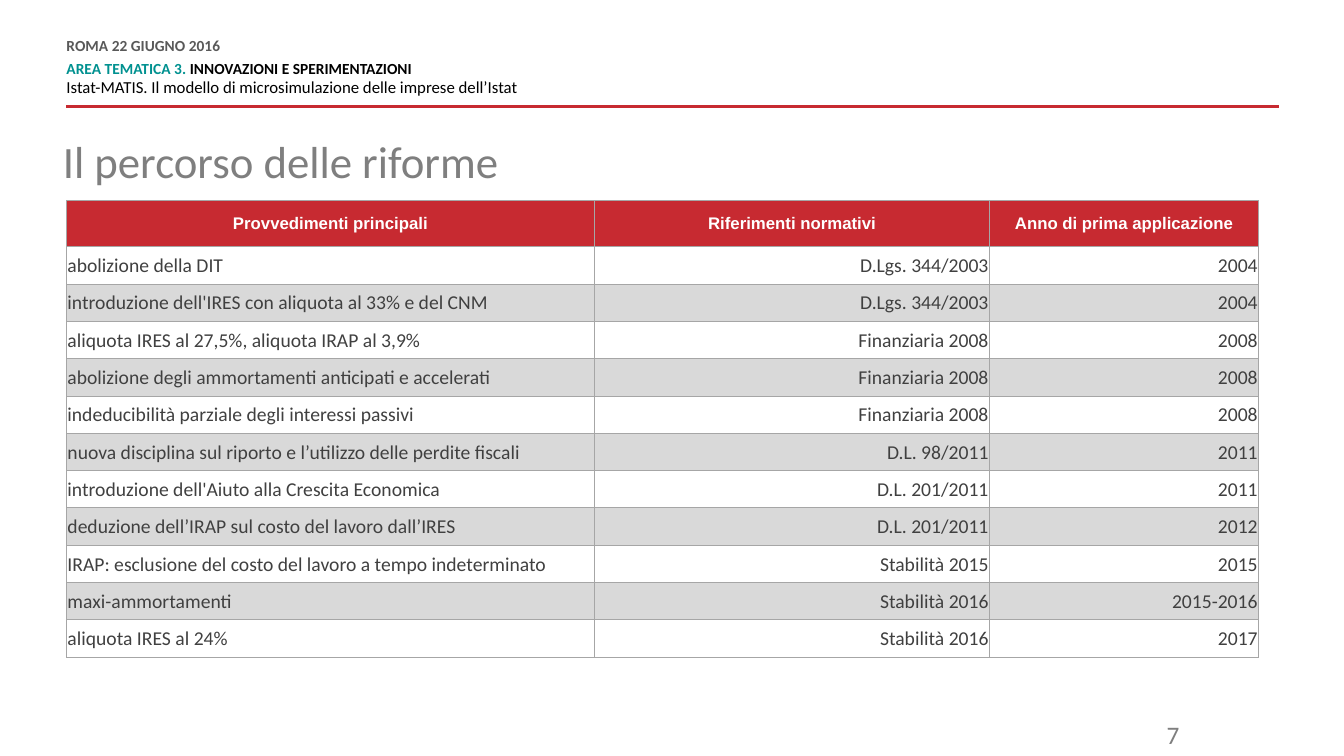
import pptx
import pptx.dml.color
import pptx.enum.shapes
import pptx.enum.text
import pptx.oxml
import pptx.oxml.ns
import pptx.util

Pt = pptx.util.Pt
RGBColor = pptx.dml.color.RGBColor
ALIGN = pptx.enum.text.PP_ALIGN
MIDDLE = pptx.enum.text.MSO_ANCHOR.MIDDLE

RED = RGBColor(0xC7, 0x2A, 0x31)
TEAL = RGBColor(0x00, 0x91, 0x90)
BLACK = RGBColor(0x00, 0x00, 0x00)
WHITE = RGBColor(0xFF, 0xFF, 0xFF)
DARK = RGBColor(0x40, 0x40, 0x40)
SLATE = RGBColor(0x59, 0x59, 0x59)
GREY = RGBColor(0x7F, 0x7F, 0x7F)
BORDER = RGBColor(0xA6, 0xA6, 0xA6)
BAND = RGBColor(0xD9, 0xD9, 0xD9)

HEADINGS = ("Provvedimenti principali", "Riferimenti normativi", "Anno di prima applicazione")
REFORMS = [
    ("abolizione della DIT", "D.Lgs. 344/2003", "2004"),
    ("introduzione dell'IRES con aliquota al 33% e del CNM", "D.Lgs. 344/2003", "2004"),
    ("aliquota IRES al 27,5%, aliquota IRAP al 3,9%", "Finanziaria 2008", "2008"),
    ("abolizione degli ammortamenti anticipati e accelerati", "Finanziaria 2008", "2008"),
    ("indeducibilità parziale degli interessi passivi", "Finanziaria 2008", "2008"),
    ("nuova disciplina sul riporto e l’utilizzo delle perdite fiscali", "D.L. 98/2011", "2011"),
    ("introduzione dell'Aiuto alla Crescita Economica", "D.L. 201/2011", "2011"),
    ("deduzione dell’IRAP sul costo del lavoro dall’IRES", "D.L. 201/2011", "2012"),
    ("IRAP: esclusione del costo del lavoro a tempo indeterminato", "Stabilità 2015", "2015"),
    ("maxi-ammortamenti", "Stabilità 2016", "2015-2016"),
    ("aliquota IRES al 24%", "Stabilità 2016", "2017"),
]


class SlideBuilder:
    font = "Calibri"

    def __init__(self, slide):
        self.slide = slide

    def apply(self, target, formats):
        for name, value in formats.items():
            setattr(target, name, value)

    def run(self, p, text, color, **formats):
        r = p.add_run()
        r.text = text
        self.apply(r.font, {"name": self.font, **formats})
        r.font.color.rgb = color

    def text(self, left, top, width, height, paragraphs, margins=None):
        """Each paragraph is a dict of formats and a list of (text, color, font formats)."""
        sp = self.slide.shapes.add_textbox(Pt(left), Pt(top), Pt(width), Pt(height))
        tf = sp.text_frame
        tf.word_wrap = True
        if margins is not None:
            sides = ("margin_left", "margin_top", "margin_right", "margin_bottom")
            self.apply(tf, dict.fromkeys(sides, Pt(margins)))
        for i, (formats, runs) in enumerate(paragraphs):
            p = tf.add_paragraph() if i else tf.paragraphs[0]
            self.apply(p, formats)
            for text, color, font in runs:
                self.run(p, text, color, **font)

    def rule(self, x1, y1, x2, y2, color, width):
        line = self.slide.shapes.add_connector(
            pptx.enum.shapes.MSO_CONNECTOR.STRAIGHT, Pt(x1), Pt(y1), Pt(x2), Pt(y2))
        line.line.color.rgb = color
        line.line.width = Pt(width)
        pptx.oxml.ns.qn("a:effectLst")
        line._element.spPr.append(pptx.oxml.parse_xml(
            f'<a:effectLst {pptx.oxml.ns.nsdecls("a")}/>'))

    def cell(self, cell, text, fill, color, align, margins, **font):
        tcPr = cell._tc.get_or_add_tcPr()
        for side in ("lnL", "lnR", "lnT", "lnB"):
            tcPr.append(pptx.oxml.parse_xml(
                f'<a:{side} {pptx.oxml.ns.nsdecls("a")} w="{Pt(0.75)}">'
                f'<a:solidFill><a:srgbClr val="{BORDER}"/></a:solidFill></a:{side}>'))
        cell.fill.solid()
        cell.fill.fore_color.rgb = fill
        self.apply(cell, {"vertical_anchor": MIDDLE, **margins})
        p = cell.text_frame.paragraphs[0]
        p.alignment = align
        self.run(p, text, color, **font)

    def table(self, left, top, widths, head_height, row_height, headings, rows):
        height = head_height + row_height * len(rows)
        table = self.slide.shapes.add_table(
            len(rows) + 1, len(widths), Pt(left), Pt(top), Pt(sum(widths)), Pt(height)).table
        for column, width in zip(table.columns, widths):
            column.width = Pt(width)
        for i, row in enumerate(table.rows):
            row.height = Pt(row_height if i else head_height)
        for j, text in enumerate(headings):
            self.cell(table.cell(0, j), text, RED, WHITE, ALIGN.CENTER, {},
                      name="Arial", size=Pt(12), bold=True)
        margins = {"margin_left": Pt(0.7), "margin_top": Pt(0.7),
                   "margin_right": Pt(0.7), "margin_bottom": Pt(0)}
        for i, row in enumerate(rows, 1):
            for j, text in enumerate(row):
                self.cell(table.cell(i, j), text, WHITE if i % 2 else BAND, DARK,
                          ALIGN.RIGHT if j else ALIGN.LEFT, margins, size=Pt(14), bold=False)


def main():
    prs = pptx.Presentation()
    prs.slide_width, prs.slide_height = Pt(960), Pt(540)
    s = SlideBuilder(prs.slides.add_slide(prs.slide_layouts[6]))

    s.rule(47.5, 76.3, 913.7, 76.3, RED, 2)
    strong = {"size": Pt(11), "bold": True}
    leading = {"line_spacing": Pt(10.8)}
    s.text(47.5, 28, 600.5, 42.5, [
        ({**leading, "space_after": Pt(6)}, [("ROMA 22 GIUGNO 2016", SLATE, strong)]),
        (leading, [("AREA TEMATICA 3. ", TEAL, strong),
                   ("INNOVAZIONI E SPERIMENTAZIONI", BLACK, strong)]),
        ({**leading, "space_before": Pt(3), "space_after": Pt(6)},
         [("Istat-MATIS. Il modello di microsimulazione delle imprese dell’Istat",
           BLACK, {"size": Pt(12)})]),
    ], margins=0)
    s.text(44.9, 100, 872, 81.4, [
        ({"line_spacing": 0.9}, [("Il percorso delle riforme", GREY, {"size": Pt(32)})]),
    ], margins=0)
    s.text(633.6, 510.5, 216, 28.8, [
        ({"alignment": ALIGN.RIGHT}, [("7", GREY, {"size": Pt(18)})]),
    ])
    s.table(47.5, 143.3, (377.2, 282.2, 192.2), 33, 26.65, HEADINGS, REFORMS)

    prs.save("out.pptx")


if __name__ == "__main__":
    main()
